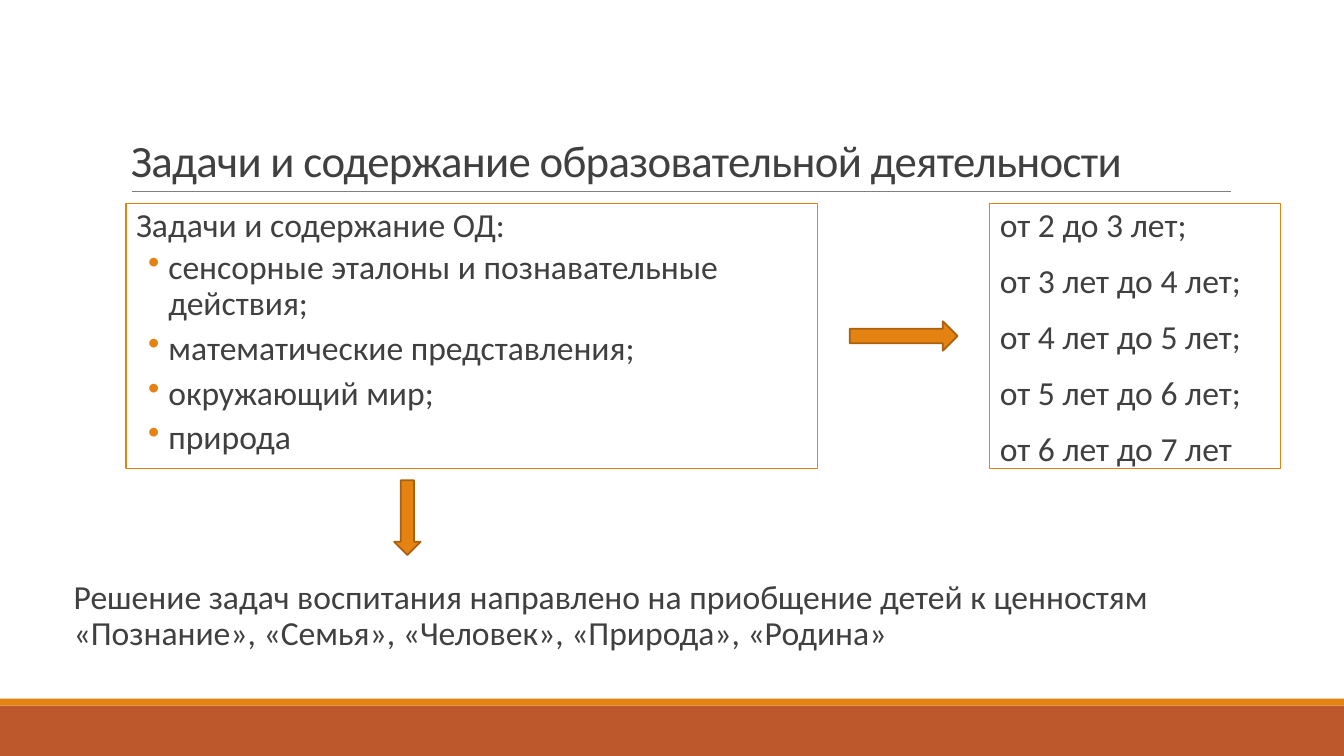
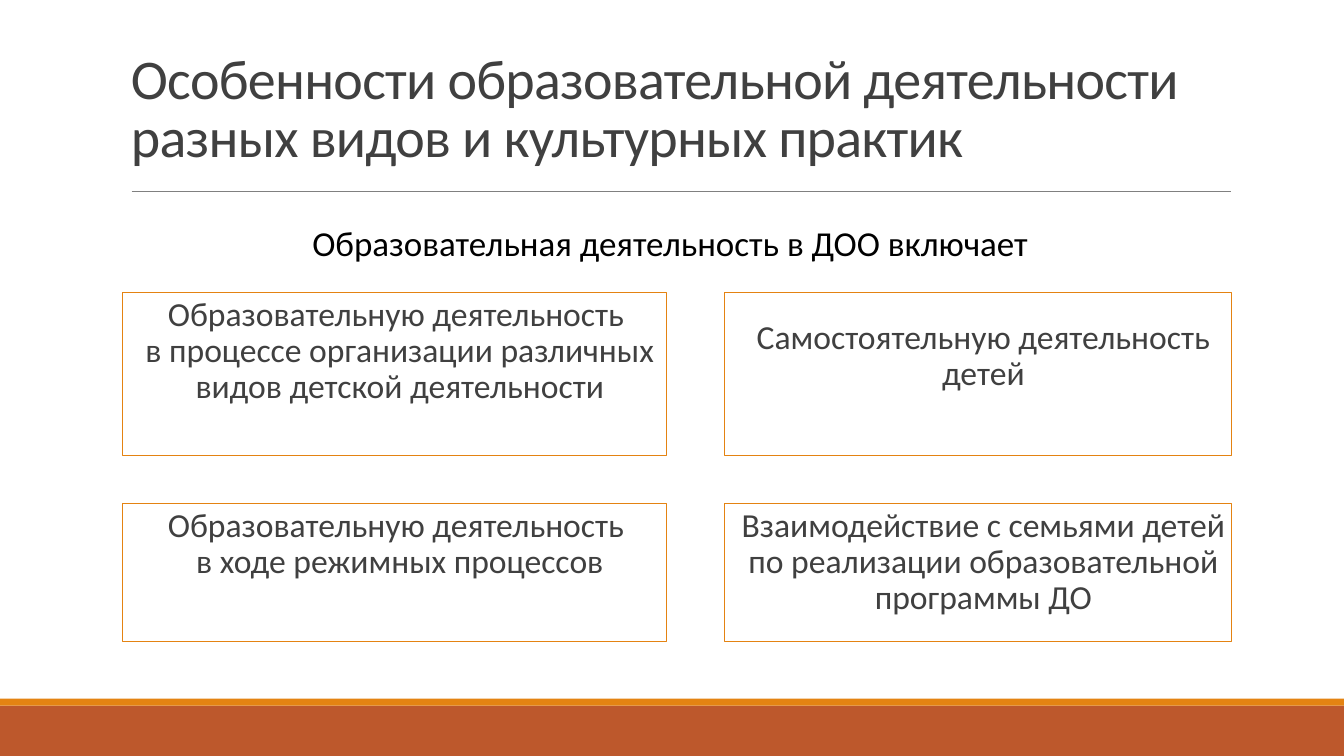
import pptx
import pptx.util
from lxml import etree
from pptx.dml.color import RGBColor
from pptx.enum.shapes import MSO_CONNECTOR, MSO_SHAPE
from pptx.enum.text import MSO_ANCHOR, PP_ALIGN
from pptx.oxml.ns import qn

Pt = pptx.util.Pt

ORANGE = RGBColor(0xE4, 0x83, 0x12)
DARK_ORANGE = RGBColor(0xA9, 0x61, 0x0D)
RUST = RGBColor(0xBD, 0x58, 0x2C)
GREY = RGBColor(0x80, 0x80, 0x80)
TEXT = RGBColor(0x40, 0x40, 0x40)
BLACK = RGBColor(0, 0, 0)
FONT = "Calibri"
WIDTH, HEIGHT = 960, 540


def add_shape(slide, kind, x, y, w, h, fill=None, line=None, weight=0.75):
    s = slide.shapes.add_shape(kind, Pt(x), Pt(y), Pt(w), Pt(h))
    s.shadow.inherit = False
    if fill is None:
        s.fill.background()
    else:
        s.fill.solid()
        s.fill.fore_color.rgb = fill
    if line is None:
        s.line.fill.background()
    else:
        s.line.color.rgb = line
        s.line.width = Pt(weight)
    return s


def add_arrow(slide, kind, x, y, w, h):
    add_shape(slide, kind, x, y, w, h, ORANGE, DARK_ORANGE, 1.25)


def add_textbox(slide, x, y, w, h):
    return slide.shapes.add_textbox(Pt(x), Pt(y), Pt(w), Pt(h))


def style(p, size, color=TEXT):
    p.font.name = FONT
    p.font.size = Pt(size)
    p.font.color.rgb = color


def add_bullet(pPr):
    """Orange round bullet, placed ahead of the default run properties."""
    color = etree.Element(qn("a:buClr"))
    etree.SubElement(color, qn("a:srgbClr")).set("val", str(ORANGE))
    char = etree.Element(qn("a:buChar"))
    char.set("char", "•")
    default = pPr.find(qn("a:defRPr"))
    default.addprevious(color)
    default.addprevious(char)


def fill_body(s, lines, bullets=(), align=PP_ALIGN.LEFT,
              anchor=MSO_ANCHOR.TOP, bottom=3.6):
    """Plain lines first, then bulleted ones."""
    tf = s.text_frame
    tf.word_wrap = True
    tf.vertical_anchor = anchor
    tf.margin_left = tf.margin_right = 0
    tf.margin_top, tf.margin_bottom = Pt(3.6), Pt(bottom)
    for i, text in enumerate([*lines, *bullets]):
        bulleted = i >= len(lines)
        p = tf.paragraphs[0] if i == 0 else tf.add_paragraph()
        p.text = text
        p.alignment = align
        p.line_spacing = 0.9
        p.space_before = Pt(2 if bulleted else 12)
        p.space_after = Pt(4 if bulleted else 2)
        style(p, 24)
        pPr = p._p.get_or_add_pPr()
        pPr.set("marL", str(Pt(30.24 if bulleted else 7.2)))
        pPr.set("indent", str(Pt(-14.4 if bulleted else 0)))
        if bulleted:
            add_bullet(pPr)


def add_body_box(slide, x, y, w, h, lines, **options):
    s = add_shape(slide, MSO_SHAPE.RECTANGLE, x, y, w, h, line=ORANGE)
    fill_body(s, lines, **options)


def add_base(prs, title, size, anchor):
    """Blank slide with the shared bands, rule and title."""
    slide = prs.slides.add_slide(prs.slide_layouts[6])
    # Footer bands
    add_shape(slide, MSO_SHAPE.RECTANGLE, 0, 504, WIDTH, 36, RUST)
    add_shape(slide, MSO_SHAPE.RECTANGLE, 0, 499, WIDTH, 5, ORANGE)
    # Rule under the title
    rule = slide.shapes.add_connector(MSO_CONNECTOR.STRAIGHT, Pt(94), Pt(136.8),
                                      Pt(879), Pt(136.8))
    rule.line.color.rgb = GREY
    rule.line.width = Pt(0.5)
    etree.SubElement(rule._element.spPr, qn("a:effectLst"))
    # Title
    tf = add_textbox(slide, 86.4, 22.4, 792, 114.4).text_frame
    tf.word_wrap = True
    tf.vertical_anchor = anchor
    p = tf.paragraphs[0]
    p.text = title
    p.line_spacing = 0.85
    style(p, size)
    p._p.pPr.find(qn("a:defRPr")).set("spc", "-50")
    return slide


def build_tasks(prs):
    slide = add_base(prs, "Задачи и содержание образовательной деятельности",
                     32, MSO_ANCHOR.BOTTOM)
    top, height = 145.4, 189.4
    # Tasks and ages
    add_body_box(slide, 90, top, 494, height, ["Задачи и содержание ОД:"],
                 bullets=["сенсорные эталоны и познавательные действия;",
                          "математические представления;",
                          "окружающий мир;",
                          "природа"])
    add_body_box(slide, 707, top, 208, height,
                 ["от 2 до 3 лет;",
                  *(f"от {age} лет до {age + 1} лет;" for age in range(3, 6)),
                  "от 6 лет до 7 лет"])
    add_arrow(slide, MSO_SHAPE.RIGHT_ARROW, 607, 229.5, 77, 21)
    # Conclusion
    fill_body(add_textbox(slide, 45.4, 411, 835, 70),
              ["Решение задач воспитания направлено на приобщение детей к ценностям "
               "«Познание», «Семья», «Человек», «Природа», «Родина»"])
    add_arrow(slide, MSO_SHAPE.DOWN_ARROW, 281.5, 343, 19, 53.5)


def build_practices(prs):
    slide = add_base(prs, "Особенности образовательной деятельности "
                     "разных видов и культурных практик", 40, MSO_ANCHOR.MIDDLE)
    # Two by two grid: columns and rows as (start, length)
    columns = [(87.6, 388.8), (517.6, 362.4)]
    rows = [(208.8, 116.6), (359.4, 98.6)]
    middle = {"anchor": MSO_ANCHOR.MIDDLE, "bottom": 28}
    cells = [
        [("Образовательную деятельность \vв процессе организации различных "
          "видов детской деятельности", {}),
         ("Самостоятельную деятельность детей", middle)],
        [("Образовательную деятельность \vв ходе режимных процессов", {}),
         ("Взаимодействие с семьями детей по реализации образовательной "
          "программы ДО", {})],
    ]
    for (y, h), row in zip(rows, cells):
        for (x, w), (text, options) in zip(columns, row):
            add_body_box(slide, x, y, w, h, [text], align=PP_ALIGN.CENTER, **options)
    # Heading over the grid
    tf = add_textbox(slide, 216, 154.8, 545, 37.4).text_frame
    tf.word_wrap = False
    p = tf.paragraphs[0]
    p.text = "Образовательная деятельность в ДОО включает"
    style(p, 25, BLACK)


def main():
    prs = pptx.Presentation()
    prs.slide_width, prs.slide_height = Pt(WIDTH), Pt(HEIGHT)
    build_tasks(prs)
    build_practices(prs)
    prs.save("out.pptx")


if __name__ == "__main__":
    main()
